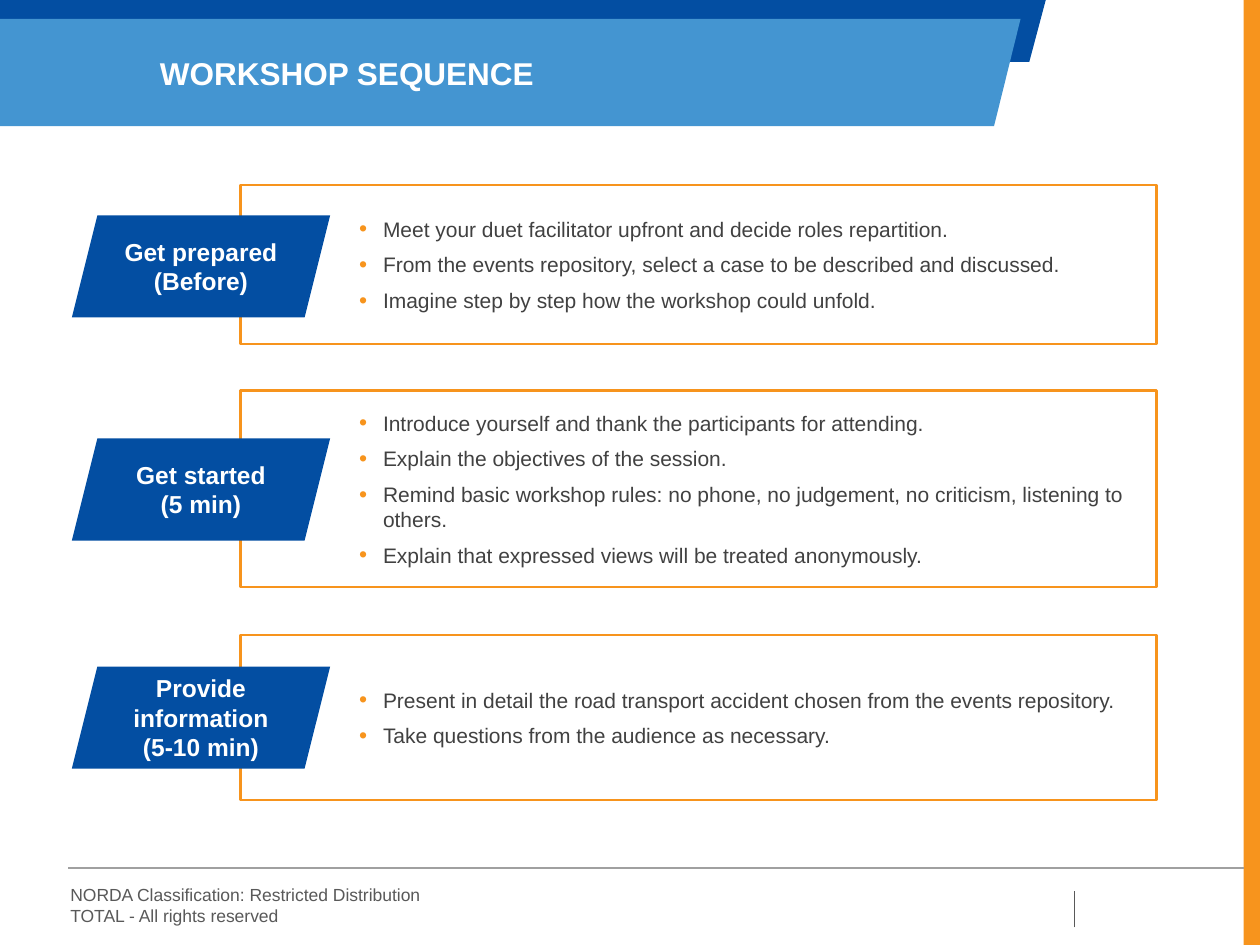
from lxml import etree
from pptx import Presentation
from pptx import util as u
from pptx.dml.color import RGBColor
from pptx.enum import shapes, text
from pptx.oxml.ns import qn

ORANGE = RGBColor(0xF7, 0x94, 0x1D)
NAVY = RGBColor(0x03, 0x4E, 0xA2)
BLUE = RGBColor(0x44, 0x95, 0xD1)
WHITE = RGBColor(0xFF, 0xFF, 0xFF)
TEXT_GRAY = RGBColor(0x41, 0x41, 0x41)
FOOTER_GRAY = RGBColor(0x59, 0x59, 0x59)
RULE_GRAY = RGBColor(0xA0, 0xA0, 0xA0)

TITLE_FORMAT = {"size": u.Pt(18), "bold": True, "color": WHITE}
LABEL_FORMAT = {"size": u.Pt(14), "bold": True, "color": WHITE}
BODY_FORMAT = {"size": u.Pt(12), "color": TEXT_GRAY}
FOOTER_FORMAT = {"size": u.Pt(10), "color": FOOTER_GRAY}

LABEL_HEIGHT = 0.81
STEPS = [
    (1.47, 1.26, 1.71, ["Get prepared", "(Before)"], [
        "Meet your duet facilitator upfront and decide roles repartition.",
        "From the events repository, select a case to be described and discussed.",
        "Imagine step by step how the workshop could unfold.",
    ]),
    (3.10, 1.56, 3.48, ["Get started", "(5 min)"], [
        "Introduce yourself and thank the participants for attending.",
        "Explain the objectives of the session.",
        "Remind basic workshop rules: no phone, no judgement, no criticism, listening to others.",
        "Explain that expressed views will be treated anonymously.",
    ]),
    (5.04, 1.31, 5.29, ["Provide information", "(5-10 min)"], [
        "Present in detail the road transport accident chosen from the events repository.",
        "Take questions from the audience as necessary.",
    ]),
]


def inches(values):
    return [u.Inches(value) for value in values]


def paint(shape, fill=None, line=None):
    shape.shadow.inherit = False
    if fill is None:
        shape.fill.background()
    else:
        shape.fill.solid()
        shape.fill.fore_color.rgb = fill
    if line is None:
        shape.line.fill.background()
    else:
        shape.line.color.rgb = line
        shape.line.width = u.Pt(1.5)


def add_bullet(paragraph):
    properties = paragraph._p.get_or_add_pPr()
    properties.set("marL", str(u.Inches(0.19)))
    properties.set("indent", str(-u.Inches(0.19)))
    color = etree.SubElement(properties, qn("a:buClr"))
    etree.SubElement(color, qn("a:srgbClr"), val=str(ORANGE))
    etree.SubElement(properties, qn("a:buSzPct"), val="110000")
    etree.SubElement(properties, qn("a:buFont"), typeface="Arial")
    etree.SubElement(properties, qn("a:buChar"), char="•")


def write(shape, lines, formats, align=text.PP_ALIGN.LEFT, bullets=False,
          anchor=text.MSO_ANCHOR.MIDDLE, margins=(0.1, 0.05, 0.1, 0.05)):
    frame = shape.text_frame
    frame.word_wrap = True
    frame.vertical_anchor = anchor
    for side, margin in zip(("left", "top", "right", "bottom"), margins):
        setattr(frame, f"margin_{side}", u.Inches(margin))
    for index, line in enumerate(lines):
        paragraph = frame.add_paragraph() if index else frame.paragraphs[0]
        paragraph.alignment = align
        if bullets:
            add_bullet(paragraph)
            paragraph.space_before = u.Pt(6 if index else 0)
        run = paragraph.add_run()
        run.text = line
        run.font.name = "Arial"
        for name, value in formats.items():
            if name == "color":
                run.font.color.rgb = value
            else:
                setattr(run.font, name, value)


def add_block(slide, kind, box, fill=None, line=None):
    shape = slide.shapes.add_shape(kind, *inches(box))
    paint(shape, fill, line)
    return shape


def add_banner(slide, points, fill):
    start, *others = [tuple(inches(point)) for point in points]
    builder = slide.shapes.build_freeform(*start)
    builder.add_line_segments(others, close=True)
    paint(builder.convert_to_shape(), fill)


def add_rule(slide, ends, color):
    rule = slide.shapes.add_connector(shapes.MSO_CONNECTOR.STRAIGHT, *inches(ends))
    rule.line.color.rgb = color
    rule.line.width = u.Pt(0.75)
    etree.SubElement(rule._element.spPr, qn("a:effectLst"))


def add_text(slide, box, lines, formats, margins):
    shape = slide.shapes.add_textbox(*inches(box))
    write(shape, lines, formats, anchor=text.MSO_ANCHOR.TOP, margins=margins)


def add_step_box(slide, top, height, bullets):
    box = add_block(slide, shapes.MSO_SHAPE.RECTANGLE,
                    (1.91, top, 7.27, height), line=ORANGE)
    write(box, bullets, BODY_FORMAT, bullets=True, margins=(0.94, 0.05, 0, 0.05))


def add_step_label(slide, top, lines):
    label = add_block(slide, shapes.MSO_SHAPE.PARALLELOGRAM,
                      (0.57, top, 2.05, LABEL_HEIGHT), fill=NAVY)
    write(label, lines, LABEL_FORMAT, align=text.PP_ALIGN.CENTER)


def main():
    presentation = Presentation()
    presentation.slide_width = u.Inches(10)
    presentation.slide_height = u.Inches(7.5)
    slide = presentation.slides.add_slide(presentation.slide_layouts[6])

    add_block(slide, shapes.MSO_SHAPE.RECTANGLE, (9.87, 0, 0.13, 7.5), fill=ORANGE)
    add_rule(slide, (0.54, 6.89, 9.87, 6.89), RULE_GRAY)
    add_rule(slide, (8.53, 7.36, 8.53, 7.07), FOOTER_GRAY)
    add_text(slide, (0.46, 6.97, 5.39, 0.44),
             ["NORDA Classification: Restricted Distribution",
              "TOTAL - All rights reserved"],
             FOOTER_FORMAT, (0.1, 0.05, 0.1, 0.05))
    add_banner(slide, [(0, 0), (8.3, 0), (8.17, 0.49), (0, 0.49)], NAVY)
    add_banner(slide, [(0, 0.15), (8.1, 0.15), (7.89, 1), (0, 1)], BLUE)
    add_text(slide, (1.27, 0.43, 7.74, 0.3), ["WORKSHOP SEQUENCE"],
             TITLE_FORMAT, (0, 0, 0, 0))

    for top, height, label_top, label, bullets in STEPS:
        add_step_box(slide, top, height, bullets)
        add_step_label(slide, label_top, label)

    presentation.save("out.pptx")


if __name__ == "__main__":
    main()
